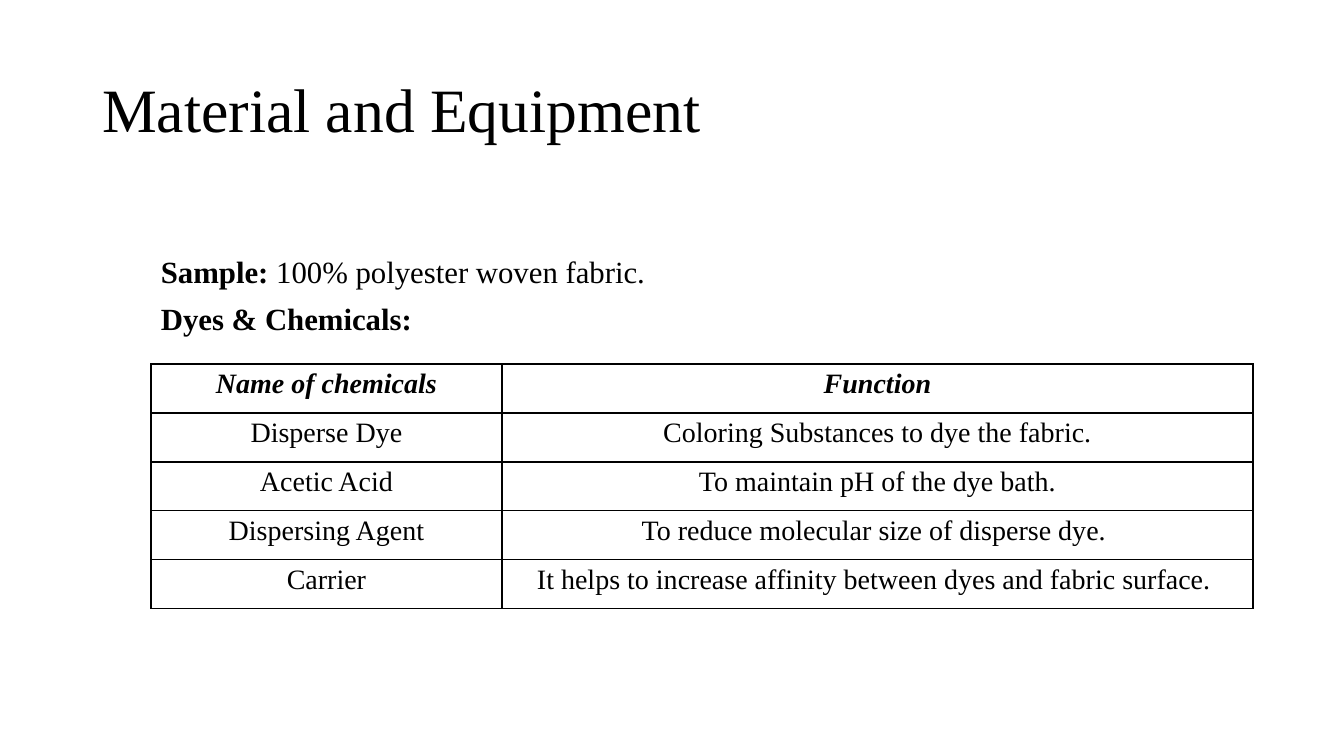
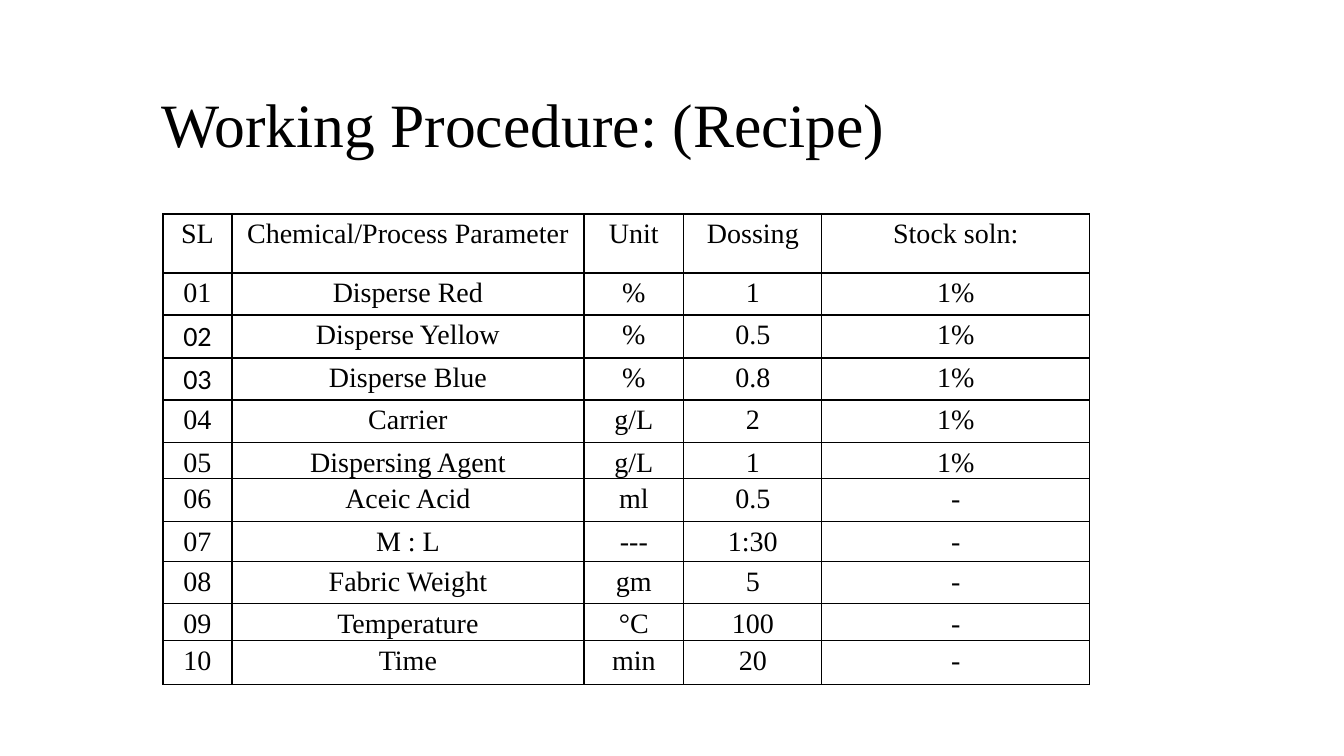
import lxml.etree
import pptx
import pptx.dml.color
import pptx.enum.text
import pptx.oxml.ns
import pptx.util

EMU_PER_PX = 914400 / 100.8
BLACK = pptx.dml.color.RGBColor(0, 0, 0)
WHITE = pptx.dml.color.RGBColor(255, 255, 255)
FONT = "Times New Roman"
BORDER_PT = 1
CELL_INSET = 7


def px(n):
    return pptx.util.Emu(round(n * EMU_PER_PX))


def style(p, size, spacing, align):
    p.alignment = align
    p.line_spacing = spacing
    for r in p.runs:
        r.font.name = FONT
        r.font.size = pptx.util.Pt(size)
        r.font.color.rgb = BLACK


LEFT = pptx.enum.text.PP_ALIGN.LEFT
CENTER = pptx.enum.text.PP_ALIGN.CENTER

chemicals = [
    ["Name of chemicals", "Function"],
    ["Disperse Dye", "Coloring Substances to dye the fabric."],
    ["Acetic Acid", "To maintain pH of the dye bath."],
    ["Dispersing Agent", "To reduce molecular size of disperse dye. "],
    ["Carrier", "It helps to increase affinity between dyes and fabric surface. "],
]
recipe = [
    ["SL", "Chemical/Process Parameter", "Unit", "Dossing", "Stock soln:"],
    ["01", "Disperse Red", "%", "1", "1%"],
    ["02", "Disperse Yellow", "%", "0.5", "1%"],
    ["03", "Disperse Blue", "%", "0.8", "1%"],
    ["04", "Carrier", "g/L", "2", "1%"],
    ["05", "Dispersing Agent", "g/L", "1", "1%"],
    ["06", "Aceic Acid", "ml", "0.5", "-"],
    ["07", "M : L", "---", "1:30", "-"],
    ["08", "Fabric Weight", "gm", "5", "-"],
    ["09", "Temperature", "°C", "100", "-"],
    ["10", "Time", "min", "20", "-"],
]

# Title, title box, table cells, table corner, column widths, row heights
pages = [
    ("Material and Equipment", (92, 40, 1160, 146), chemicals,
     (151, 364), [351, 751], [49] * 5),
    ("Working Procedure: (Recipe)", (151, 76, 1058, 103), recipe,
     (163, 214), [69, 352, 100, 138, 268],
     [59, 42, 43, 42, 43, 36, 43, 40, 42, 37, 44]),
]

prs = pptx.Presentation()
prs.slide_width, prs.slide_height = px(1344), px(756)
fill = prs.slide_master.background.fill
fill.solid()
fill.fore_color.rgb = WHITE

tables = []
for title, box, rows, corner, widths, heights in pages:
    s = prs.slides.add_slide(prs.slide_layouts[5])

    # Title
    sp = s.shapes.title
    sp.left, sp.top, sp.width, sp.height = [px(n) for n in box]
    tf = sp.text_frame
    tf.text = title
    tf.auto_size = pptx.enum.text.MSO_AUTO_SIZE.NONE
    tf.vertical_anchor = pptx.enum.text.MSO_ANCHOR.MIDDLE
    style(tf.paragraphs[0], 44, 0.9, LEFT)

    # Table
    table = s.shapes.add_table(len(rows), len(widths), px(corner[0]), px(corner[1]),
                               px(sum(widths)), px(sum(heights))).table
    table.first_row = table.horz_banding = False
    tables.append(table)
    for column, width in zip(table.columns, widths):
        column.width = px(width)
    for row, height, texts in zip(table.rows, heights, rows):
        row.height = px(height)
        for cell, text in zip(row.cells, texts):
            cell.text = text
            cell.margin_left = cell.margin_right = px(CELL_INSET)
            cell.margin_top = cell.margin_bottom = 0
            style(cell.text_frame.paragraphs[0], 20, 1.15, CENTER)
            cell.fill.background()

            # Cell borders come before the fill
            tcPr = cell._tc.get_or_add_tcPr()
            for i, side in enumerate(("lnL", "lnR", "lnT", "lnB")):
                ln = lxml.etree.Element(pptx.oxml.ns.qn("a:" + side),
                                        w=str(pptx.util.Pt(BORDER_PT)))
                solid = lxml.etree.SubElement(ln, pptx.oxml.ns.qn("a:solidFill"))
                lxml.etree.SubElement(solid, pptx.oxml.ns.qn("a:srgbClr"), val=str(BLACK))
                tcPr.insert(i, ln)

# Header of the chemicals table
for cell in tables[0].rows[0].cells:
    font = cell.text_frame.paragraphs[0].runs[0].font
    font.bold = font.italic = True

# Two serial numbers in the recipe table use another font
for row in (2, 3):
    tables[1].cell(row, 0).text_frame.paragraphs[0].runs[0].font.name = "Calibri"

# Sample text above the chemicals table
tf = prs.slides[0].shapes.add_textbox(px(151), px(252), px(1058), px(101)).text_frame
tf.word_wrap = True
lines = [("Sample:", " 100% polyester woven fabric."), ("Dyes & Chemicals:",)]
for i, parts in enumerate(lines):
    p = tf.add_paragraph() if i else tf.paragraphs[0]
    for j, part in enumerate(parts):
        r = p.add_run()
        r.text = part
        r.font.bold = j == 0
    style(p, 22, 0.9, LEFT)
    if i:
        p.space_before = pptx.util.Pt(10)

prs.save("out.pptx")
